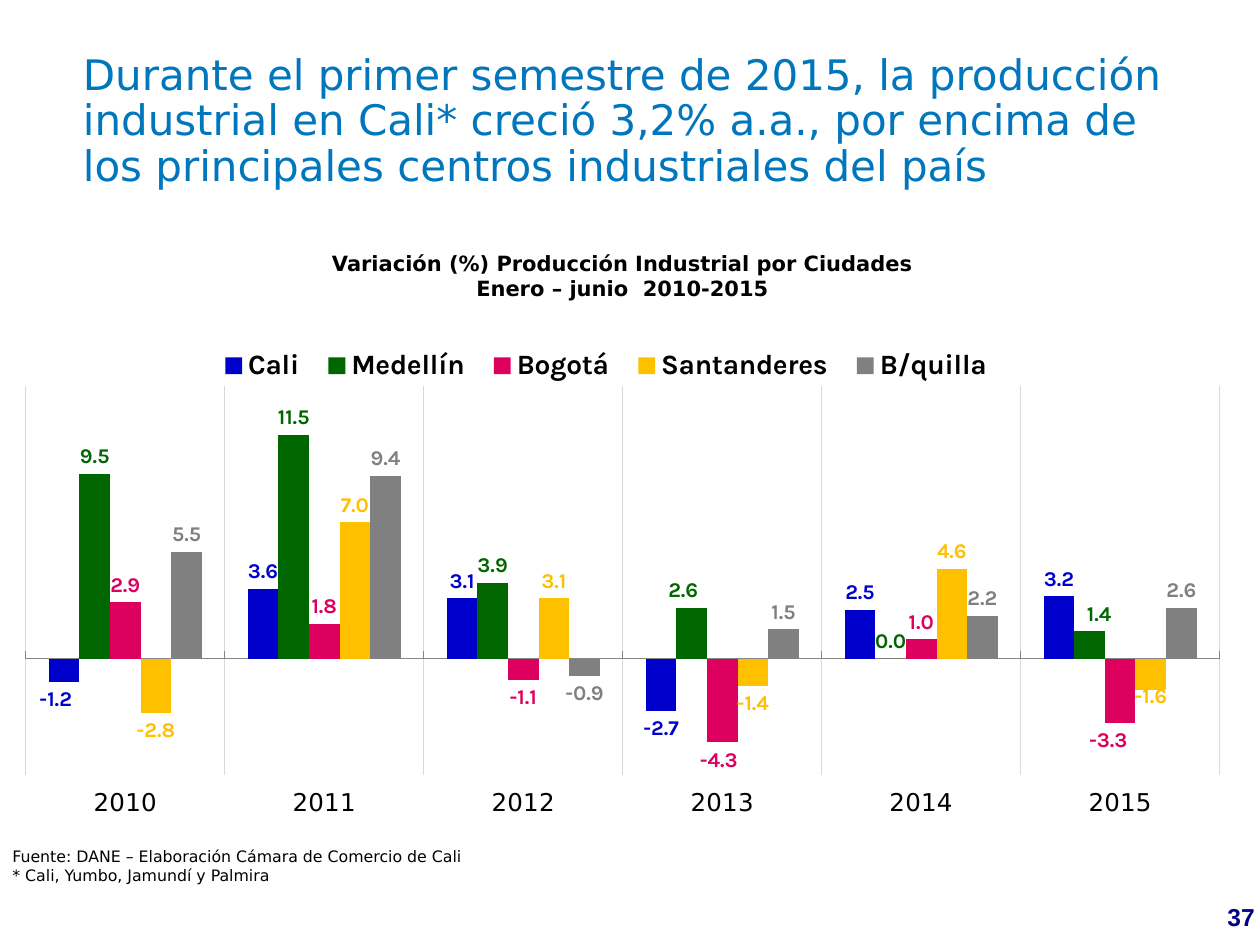
from lxml import etree
from pptx import Presentation
from pptx.chart.data import CategoryChartData
from pptx.dml.color import RGBColor
from pptx.enum.chart import XL_CHART_TYPE, XL_LABEL_POSITION, XL_LEGEND_POSITION, XL_TICK_LABEL_POSITION, XL_TICK_MARK
from pptx.enum.text import PP_ALIGN
from pptx.oxml import parse_xml
from pptx.oxml.ns import nsdecls
from pptx.util import Inches, Pt

COLUMNS = XL_CHART_TYPE.COLUMN_CLUSTERED
OUTSIDE = XL_LABEL_POSITION.OUTSIDE_END
TOP = XL_LEGEND_POSITION.TOP
LOW = XL_TICK_LABEL_POSITION.LOW
INSIDE, NO_TICK = XL_TICK_MARK.INSIDE, XL_TICK_MARK.NONE
LEFT, CENTER = PP_ALIGN.LEFT, PP_ALIGN.CENTER


def style(font, size, color, name="DejaVu Sans", bold=False):
    font.size, font.name, font.bold = Pt(size), name, bold
    font.color.rgb = RGBColor.from_string(color)


def manual_layout(**parts):
    layout = parse_xml(f"<c:layout {nsdecls('c')}><c:manualLayout/></c:layout>")
    for tag, value in parts.items():
        etree.SubElement(layout[0], "{%s}%s" % (layout.nsmap["c"], tag)).set("val", str(value))
    return layout


deck = Presentation()
deck.slide_width, deck.slide_height = Inches(10), Inches(7.5)
W, H = deck.slide_width / 100, deck.slide_height / 100
slide = deck.slides.add_slide(deck.slide_layouts[6])

texts = [
    (95.4, 94.8, 6.2, 4.5, "37", CENTER, 1, (14, "000089", "Arial", True)),
    (5.6, 5.07, 90.6, 10.5,
     "Durante el primer semestre de 2015, la producción industrial en Cali* creció 3,2% a.a., "
     "por encima de los principales centros industriales del país", LEFT, 0.9, (24, "0076BD")),
    (9.8, 25.87, 79.2, 6.67,
     "Variación (%) Producción Industrial por Ciudades\nEnero – junio  2010-2015",
     CENTER, 1, (12, "000000", "DejaVu Sans", True)),
    (0, 88.93, 59.6, 5.33,
     "Fuente: DANE – Elaboración Cámara de Comercio de Cali\n* Cali, Yumbo, Jamundí y Palmira",
     LEFT, 1, (9, "000000")),
]
for left, top, width, height, wording, align, spacing, look in texts:
    frame = slide.shapes.add_textbox(
        int(left * W), int(top * H), int(width * W), int(height * H)).text_frame
    frame.word_wrap = True
    frame.text = wording
    for paragraph in frame.paragraphs:
        paragraph.alignment, paragraph.line_spacing = align, spacing
        for run in paragraph.runs:
            style(run.font, *look)

cities = [
    ("Cali", "0000CC", (-1.2, 3.6, 3.1, -2.7, 2.5, 3.2), {0: (-0.007, 0)}),
    ("Medellín", "006600", (9.5, 11.5, 3.9, 2.6, 0, 1.4), {3: (-0.007, 0), 5: (0.008, 0)}),
    ("Bogotá", "DD005E", (2.9, 1.8, -1.1, -4.3, 1, -3.3), {3: (-0.003, 0), 5: (-0.01, 0)}),
    ("Santanderes", "FFC000", (-2.8, 7, 3.1, -1.4, 4.6, -1.6), {5: (0, -0.02)}),
    ("B/quilla", "808080", (5.5, 9.4, -0.9, 1.5, 2.2, 2.6), {}),
]
growth = CategoryChartData(number_format="0.0")
growth.categories = [str(year) for year in range(2010, 2016)]
for city, color, values, shifts in cities:
    growth.add_series(city, values)
chart = slide.shapes.add_chart(
    COLUMNS, int(2 * W), int(31.87 * H), int(95 * W), int(56.93 * H), growth).chart
chart.has_title = False
style(chart.font, 16, "000000", "Calibri")

chart.has_legend = True
chart.legend.position, chart.legend.include_in_layout = TOP, False
style(chart.legend.font, 16, "000000", "Karla", True)
chart.legend._element.find("{*}legendPos").addnext(
    manual_layout(xMode="edge", yMode="edge", x=0.15, y=0.08, w=0.67, h=0.08))

years = chart.category_axis
years.tick_label_position = LOW
years.major_tick_mark, years.minor_tick_mark = INSIDE, NO_TICK
style(years.tick_labels.font, 14, "000000")
years.format.line.color.rgb = RGBColor.from_string("868686")
years.has_major_gridlines = True
years.major_gridlines.format.line.color.rgb = RGBColor.from_string("D9D9D9")
years.major_gridlines.format.line.width = Pt(0.75)

percent = chart.value_axis
percent.minimum_scale, percent.maximum_scale = -6, 14
percent.has_major_gridlines = False
percent.visible = False

plot = chart.plots[0]
plot.gap_width, plot.overlap, plot.vary_by_categories = 150, 0, False
plot_area = chart._chartSpace.chart.plotArea
for automatic in plot_area.findall("{*}layout"):
    plot_area.remove(automatic)
plot_area.insert(0, manual_layout(layoutTarget="inner", xMode="edge", yMode="edge",
                                  x=0, y=0.158, w=0.998, h=0.724))

for series, (city, color, values, shifts) in zip(plot.series, cities):
    series.invert_if_negative = False
    series.format.fill.solid()
    series.format.fill.fore_color.rgb = RGBColor.from_string(color)
    labels = series.data_labels
    labels.show_value, labels.position = True, OUTSIDE
    labels.number_format, labels.number_format_is_linked = "0.0", False
    style(labels.font, 12, color, "Karla", True)
    for index, (x, y) in shifts.items():
        label = series.points[index].data_label
        style(label.font, 12, color, "Karla", True)
        label.position = OUTSIDE
        mark = series._element.xpath(f"c:dLbls/c:dLbl/c:idx[@val='{index}']")[0]
        mark.addnext(manual_layout(x=x, y=y))

deck.save("out.pptx")
